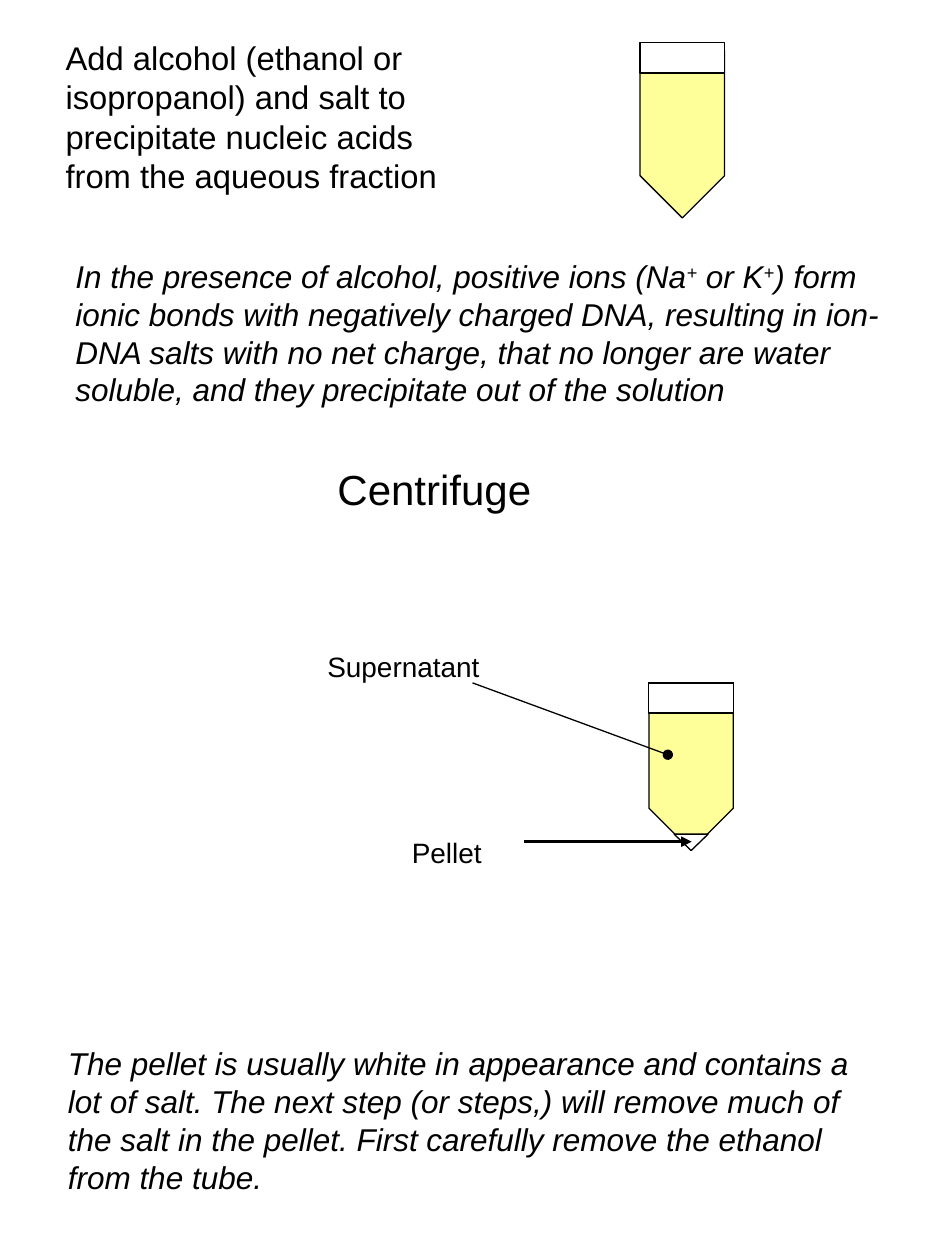
from lxml import etree
from pptx import Presentation
from pptx.dml.color import RGBColor
from pptx.enum.shapes import MSO_CONNECTOR, MSO_SHAPE
from pptx.enum.text import MSO_ANCHOR, MSO_AUTO_SIZE, PP_ALIGN
from pptx.oxml.ns import qn
from pptx.util import Inches, Pt

STRAIGHT = MSO_CONNECTOR.STRAIGHT
PENTAGON = MSO_SHAPE.PENTAGON
RECTANGLE = MSO_SHAPE.RECTANGLE
TRIANGLE = MSO_SHAPE.ISOSCELES_TRIANGLE
TOP = MSO_ANCHOR.TOP
FIT_SHAPE = MSO_AUTO_SIZE.SHAPE_TO_FIT_TEXT
LEFT = PP_ALIGN.LEFT

FONT = "Arial"
BLACK, WHITE, LIQUID = "000000", "FFFFFF", "FFFF99"
TITLE_ONLY = 5
TUBE_WIDTH, TUBE_HEIGHT, CAP_HEIGHT = 0.67, 1.33, 0.24
PELLET_WIDTH, PELLET_HEIGHT = 0.27, 0.13


def color(value):
    return RGBColor.from_string(value)


def write_text(box, text, size=18, italic=False, superscript="", wrap=True):
    frame = box.text_frame
    frame.word_wrap = wrap
    frame.auto_size = FIT_SHAPE
    frame.vertical_anchor = TOP
    para = frame.paragraphs[0]
    para.alignment = LEFT
    pieces = text.split(superscript) if superscript else [text]
    for index, piece in enumerate(pieces):
        parts = [(superscript, True), (piece, False)] if index else [(piece, False)]
        for words, raised in parts:
            span = para.add_run()
            span.text = words
            span.font.name = FONT
            span.font.size = Pt(size)
            span.font.italic = italic
            span.font.color.rgb = color(BLACK)
            if raised:
                span._r.get_or_add_rPr().set("baseline", "30000")


def add_text(page, left, top, width, height, text, **format):
    box = page.shapes.add_textbox(
        Inches(left), Inches(top), Inches(width), Inches(height))
    write_text(box, text, **format)


def add_part(group, kind, left, top, width, height, fill=WHITE, rotation=0):
    part = group.shapes.add_shape(
        kind, Inches(left), Inches(top), Inches(width), Inches(height))
    part.rotation = rotation
    part.shadow.inherit = False
    part.fill.solid()
    part.fill.fore_color.rgb = color(fill)
    part.line.color.rgb = color(BLACK)
    part.line.width = Pt(0.75)


def add_tube(page, left, top, cap_rise=0, pellet=False):
    group = page.shapes.add_group_shape()
    turn = (TUBE_HEIGHT - TUBE_WIDTH) / 2
    add_part(group, PENTAGON, left - turn, top + turn,
             TUBE_HEIGHT, TUBE_WIDTH, LIQUID, 90)
    add_part(group, RECTANGLE, left, top - cap_rise, TUBE_WIDTH, CAP_HEIGHT)
    if pellet:
        add_part(group, TRIANGLE, left + (TUBE_WIDTH - PELLET_WIDTH) / 2,
                 top + TUBE_HEIGHT - PELLET_HEIGHT,
                 PELLET_WIDTH, PELLET_HEIGHT, rotation=180)


def add_pointer(page, start, end, width, head):
    pointer = page.shapes.add_connector(
        STRAIGHT, *(Inches(value) for value in (*start, *end)))
    pointer.line.color.rgb = color(BLACK)
    pointer.line.width = Pt(width)
    etree.SubElement(pointer.line._get_or_add_ln(), qn("a:tailEnd"), type=head)
    etree.SubElement(pointer._element.spPr, qn("a:effectLst"))


def add_precipitation(page, left, top):
    title = page.shapes.title
    title.left, title.top = Inches(left), Inches(top)
    title.width, title.height = Inches(3.22), Inches(1.36)
    write_text(title, "Add alcohol (ethanol or isopropanol) and salt to precipitate "
               "nucleic acids from the aqueous fraction", size=18.7)
    add_tube(page, left + 4.66, top + 0.15, cap_rise=0.06)
    add_text(page, left + 0.08, top + 1.74, 6.61, 1.31,
             "In the presence of alcohol, positive ions (Na+ or K+) form ionic bonds "
             "with negatively charged DNA, resulting in ion-DNA salts with no net "
             "charge, that no longer are water soluble, and they precipitate out of "
             "the solution", italic=True, superscript="+")


def add_centrifuge(page, left, top):
    add_text(page, left + 0.08, top, 3.17, 0.5, "Centrifuge", size=24)
    add_tube(page, left + 2.65, top + 1.79, pellet=True)
    add_pointer(page, (left + 1.25, top + 1.79), (left + 2.8, top + 2.36), 0.75, "oval")
    add_text(page, left, top + 1.48, 1.44, 0.37, "Supernatant", size=16)
    add_text(page, left + 0.67, top + 2.95, 0.76, 0.37, "Pellet", size=16, wrap=False)
    add_pointer(page, (left + 1.66, top + 3.05), (left + 2.99, top + 3.05), 2, "triangle")


def add_pellet_note(page, left, top):
    add_text(page, left, top, 6.61, 1.31,
             "The pellet is usually white in appearance and contains a lot of salt. "
             "The next step (or steps,) will remove much of the salt in the pellet. "
             "First carefully remove the ethanol from the tube.", italic=True)


def main():
    deck = Presentation()
    deck.slide_width, deck.slide_height = Inches(7.5), Inches(10)
    page = deck.slides.add_slide(deck.slide_layouts[TITLE_ONLY])
    add_precipitation(page, 0.42, 0.25)
    add_centrifuge(page, 2.5, 3.63)
    add_pellet_note(page, 0.44, 8.24)
    deck.save("out.pptx")


if __name__ == "__main__":
    main()
